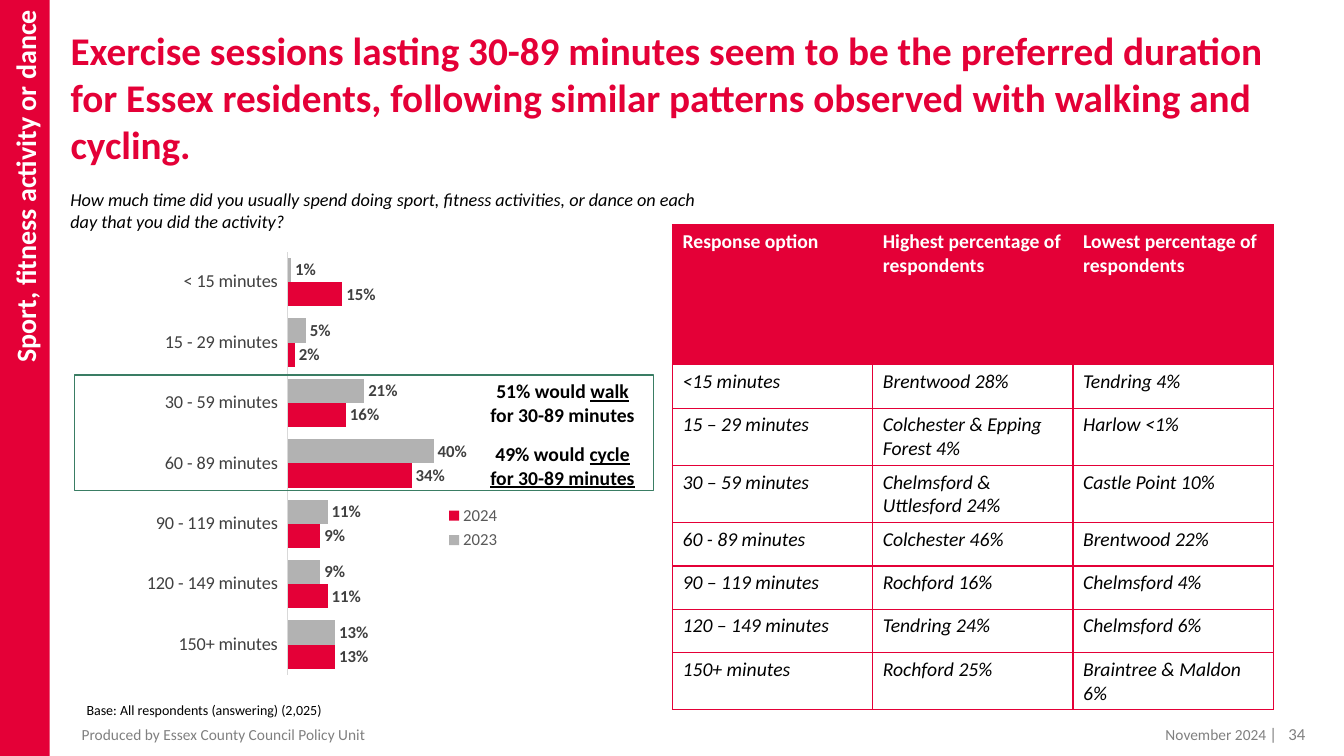
from dataclasses import dataclass

from lxml.etree import SubElement
from pptx import Presentation
from pptx.chart.data import CategoryChartData
from pptx.dml.color import RGBColor
from pptx.enum.chart import XL_CHART_TYPE as ChartType
from pptx.enum.chart import XL_LABEL_POSITION as LabelPosition
from pptx.enum.chart import XL_LEGEND_POSITION as LegendPosition
from pptx.enum.chart import XL_TICK_LABEL_POSITION as TickLabels
from pptx.enum.chart import XL_TICK_MARK as TickMark
from pptx.enum.shapes import MSO_SHAPE as Preset
from pptx.enum.text import MSO_ANCHOR as Anchor
from pptx.enum.text import MSO_AUTO_SIZE as AutoSize
from pptx.enum.text import PP_ALIGN as Align
from pptx.oxml.ns import qn
from pptx.util import Inches, Pt


@dataclass(frozen=True)
class Theme:
    """Font, colours and type sizes of the slide."""
    font: str = "Calibri"
    red: str = "E40037"
    green: str = "3A7D64"
    white: str = "FFFFFF"
    black: str = "000000"
    dark: str = "404040"
    legend: str = "595959"
    grey: str = "808080"
    silver: str = "B2B2B2"
    rule: str = "D9D9D9"
    title: float = 28
    section: float = 20
    body: float = 14
    question: float = 13
    label: float = 12
    footer: float = 11
    base: float = 10


THEME = Theme()
WIDTH, HEIGHT = Inches(13.33), Inches(7.5)
INSETS = (0.1, 0.05, 0.1, 0.05)
NO_INSETS = (0, 0, 0, 0)

DURATIONS = ["< 15 minutes", "15 - 29 minutes", "30 - 59 minutes", "60 - 89 minutes",
             "90 - 119 minutes", "120 - 149 minutes", "150+ minutes"]
SERIES = [
    ("2023", THEME.silver, (0.01, 0.05, 0.21, 0.4, 0.11, 0.09, 0.13)),
    ("2024", THEME.red, (0.15, 0.02, 0.16, 0.34, 0.09, 0.11, 0.13)),
]
DISTRICTS = [
    ("Response option", "Highest percentage of respondents", "Lowest percentage of respondents"),
    ("<15 minutes", "Brentwood 28%", "Tendring 4%"),
    ("15 – 29 minutes", "Colchester & Epping Forest 4%", "Harlow <1%"),
    ("30 – 59 minutes", "Chelmsford & Uttlesford 24%", "Castle Point 10%"),
    ("60 - 89 minutes", "Colchester 46%", "Brentwood 22%"),
    ("90 – 119 minutes", "Rochford 16%", "Chelmsford 4%"),
    ("120 – 149 minutes", "Tendring 24%", "Chelmsford 6%"),
    ("150+ minutes", "Rochford 25%", "Braintree & Maldon 6%"),
]
COMPARISONS = [
    [("51% would ", False), ("walk", True), (" for 30-89 minutes", False)],
    [("49% would ", False), ("cycle for 30-89 minutes", True)],
]


def place(left, top, width, height):
    """Turn percentages of the slide into a position and size."""
    return [int(share * side / 100) for share, side in
            zip((left, top, width, height), (WIDTH, HEIGHT, WIDTH, HEIGHT))]


def style(font, size, color, bold=False, italic=False):
    """Set the face, size, colour and emphasis of a font."""
    font.name, font.size, font.bold, font.italic = THEME.font, Pt(size), bold, italic
    font.color.rgb = RGBColor.from_string(color)


def paint(fill, color):
    """Give a fill one solid colour."""
    fill.solid()
    fill.fore_color.rgb = RGBColor.from_string(color)


def set_insets(frame, insets):
    """Set the four text margins in inches."""
    (frame.margin_left, frame.margin_top,
     frame.margin_right, frame.margin_bottom) = map(Inches, insets)


def add_text(slide, area, text, size, color, bold=False, italic=False, align=Align.LEFT,
             anchor=Anchor.TOP, insets=INSETS, grow=False):
    """Add a wrapped text box with one paragraph."""
    frame = slide.shapes.add_textbox(*place(*area)).text_frame
    frame.word_wrap, frame.vertical_anchor = True, anchor
    frame.auto_size = AutoSize.SHAPE_TO_FIT_TEXT if grow else AutoSize.NONE
    set_insets(frame, insets)
    paragraph = frame.paragraphs[0]
    paragraph.text, paragraph.alignment = text, align
    style(paragraph.font, size, color, bold, italic)


def add_rectangle(slide, area, fill=None, line=None):
    """Add a flat rectangle with an optional fill and outline."""
    shape = slide.shapes.add_shape(Preset.RECTANGLE, *place(*area))
    shape.shadow.inherit = False
    if fill:
        paint(shape.fill, fill)
    else:
        shape.fill.background()
    if line:
        paint(shape.line.fill, line)
        shape.line.width = Pt(1)
    else:
        shape.line.fill.background()
    return shape


def add_section_band(slide, area, text):
    """Add the side band with upward-reading text."""
    frame = add_rectangle(slide, area, fill=THEME.red).text_frame
    frame._txBody.bodyPr.set("vert", "vert270")
    frame.vertical_anchor = Anchor.MIDDLE
    set_insets(frame, (0.1, 0.1, 0.1, 0.05))
    paragraph = frame.paragraphs[0]
    paragraph.text, paragraph.alignment = text, Align.RIGHT
    style(paragraph.font, THEME.section, THEME.white, bold=True)


def add_comparisons(slide, area):
    """Add the centred notes with underlined words."""
    frame = slide.shapes.add_textbox(*place(*area)).text_frame
    frame.word_wrap = True
    set_insets(frame, NO_INSETS)
    for index, runs in enumerate(COMPARISONS):
        paragraph = frame.add_paragraph() if index else frame.paragraphs[0]
        paragraph.alignment, paragraph.space_after = Align.CENTER, Pt(11.3)
        style(paragraph.font, THEME.body, THEME.black, bold=True)
        for text, underlined in runs:
            run = paragraph.add_run()
            run.text, run.font.underline = text, underlined


def set_layout(parent, index, shares, inner=False):
    """Fix the place of a chart part by shares of the chart."""
    for existing in parent.findall(qn("c:layout")):
        parent.remove(existing)
    layout = SubElement(parent, qn("c:layout"))
    parent.insert(index, layout)
    manual = SubElement(layout, qn("c:manualLayout"))
    settings = [("layoutTarget", "inner")] if inner else []
    settings += [("xMode", "edge"), ("yMode", "edge"), *zip("xywh", shares)]
    for tag, value in settings:
        SubElement(manual, qn(f"c:{tag}")).set("val", str(value))


def add_duration_chart(slide, area):
    """Add the bar chart of session durations by year."""
    data = CategoryChartData(number_format="0%")
    data.categories = DURATIONS
    for name, _, values in SERIES:
        data.add_series(name, values)
    chart = slide.shapes.add_chart(ChartType.BAR_CLUSTERED, *place(*area), data).chart
    style(chart.font, THEME.base, THEME.black)
    chart.has_title = False
    plot = chart.plots[0]
    plot.gap_width, plot.overlap, plot.vary_by_categories = 50, 0, False
    for series, (_, color, _) in zip(plot.series, SERIES):
        paint(series.format.fill, color)
        labels = series.data_labels
        labels.show_value, labels.position = True, LabelPosition.OUTSIDE_END
        labels.number_format, labels.number_format_is_linked = "0%", False
        style(labels.font, THEME.label, THEME.dark, bold=True)
    categories, scale = chart.category_axis, chart.value_axis
    categories.reverse_order = True
    categories.major_tick_mark = categories.minor_tick_mark = TickMark.NONE
    categories.tick_label_position = TickLabels.LOW
    paint(categories.format.line.fill, THEME.rule)
    categories.format.line.width = Pt(0.75)
    style(categories.tick_labels.font, THEME.question, THEME.dark)
    scale.minimum_scale, scale.maximum_scale = 0, 1
    scale.has_major_gridlines = scale.visible = False
    chart.has_legend = True
    legend = chart.legend
    legend.position, legend.include_in_layout = LegendPosition.RIGHT, False
    style(legend.font, THEME.label, THEME.legend)
    set_layout(chart._chartSpace.chart.plotArea, 0, (0.33, 0.05, 0.6, 0.95), inner=True)
    set_layout(legend._element, 1, (0.57, 0.61, 0.13, 0.12))


def add_borders(cell, color):
    """Draw a one-point border on all sides of a cell."""
    properties = cell._tc.get_or_add_tcPr()
    for index, side in enumerate("LRTB"):
        line = SubElement(properties, qn(f"a:ln{side}"), w=str(Pt(1)))
        properties.insert(index, line)
        SubElement(SubElement(line, qn("a:solidFill")), qn("a:srgbClr"), val=color)


def add_district_table(slide, area):
    """Add the table of highest and lowest districts."""
    rows, columns = len(DISTRICTS), len(DISTRICTS[0])
    table = slide.shapes.add_table(rows, columns, *place(*area)).table
    table.horz_banding = False
    for index, row in enumerate(table.rows):
        header = index == 0
        row.height = Inches(0.43 if index else 1.39)
        for cell, text in zip(row.cells, DISTRICTS[index]):
            cell.text = text
            style(cell.text_frame.paragraphs[0].font, THEME.body,
                  THEME.white if header else THEME.black, bold=header, italic=not header)
            if header:
                paint(cell.fill, THEME.red)
            else:
                cell.fill.background()
            add_borders(cell, THEME.red)


def main():
    """Build the slide and save it."""
    presentation = Presentation()
    presentation.slide_width, presentation.slide_height = WIDTH, HEIGHT
    slide = presentation.slides.add_slide(presentation.slide_layouts[6])
    add_text(slide, (4.5, 24.27, 50, 7.2), "How much time did you usually spend doing sport, fitness "
             "activities, or dance on each day that you did the activity?",
             THEME.question, THEME.black, italic=True, grow=True)
    add_duration_chart(slide, (6.45, 30.4, 45.3, 58.93))
    add_section_band(slide, (0, 0, 3.7, 100), "Sport, fitness activity or dance")
    add_text(slide, (5.7, 92.13, 60.2, 3.6), "Base: All respondents (answering) (2,025)",
             THEME.base, THEME.black, grow=True)
    add_text(slide, (5.25, 3.47, 92.7, 19.07), "Exercise sessions lasting 30-89 minutes seem to be the "
             "preferred duration for Essex residents, following similar patterns observed with "
             "walking and cycling.", THEME.title, THEME.red, bold=True, insets=NO_INSETS)
    add_text(slide, (4.65, 96.13, 49, 2), "Produced by Essex County Council Policy Unit",
             THEME.footer, THEME.grey, anchor=Anchor.MIDDLE, insets=(0.19, 0.05, 0.1, 0.05))
    add_district_table(slide, (50.04, 29.73, 44.7, 64.27))
    add_rectangle(slide, (5.55, 49.6, 43.06, 15.33), line=THEME.green)
    add_comparisons(slide, (36.08, 50.13, 11.55, 11.07))
    add_text(slide, (76.97, 96.13, 18, 2), "November 2024", THEME.footer, THEME.grey,
             align=Align.RIGHT, anchor=Anchor.MIDDLE)
    add_text(slide, (93.7, 95.07, 6.3, 2), "|   34", THEME.label, THEME.grey)
    presentation.save("out.pptx")


if __name__ == "__main__":
    main()
